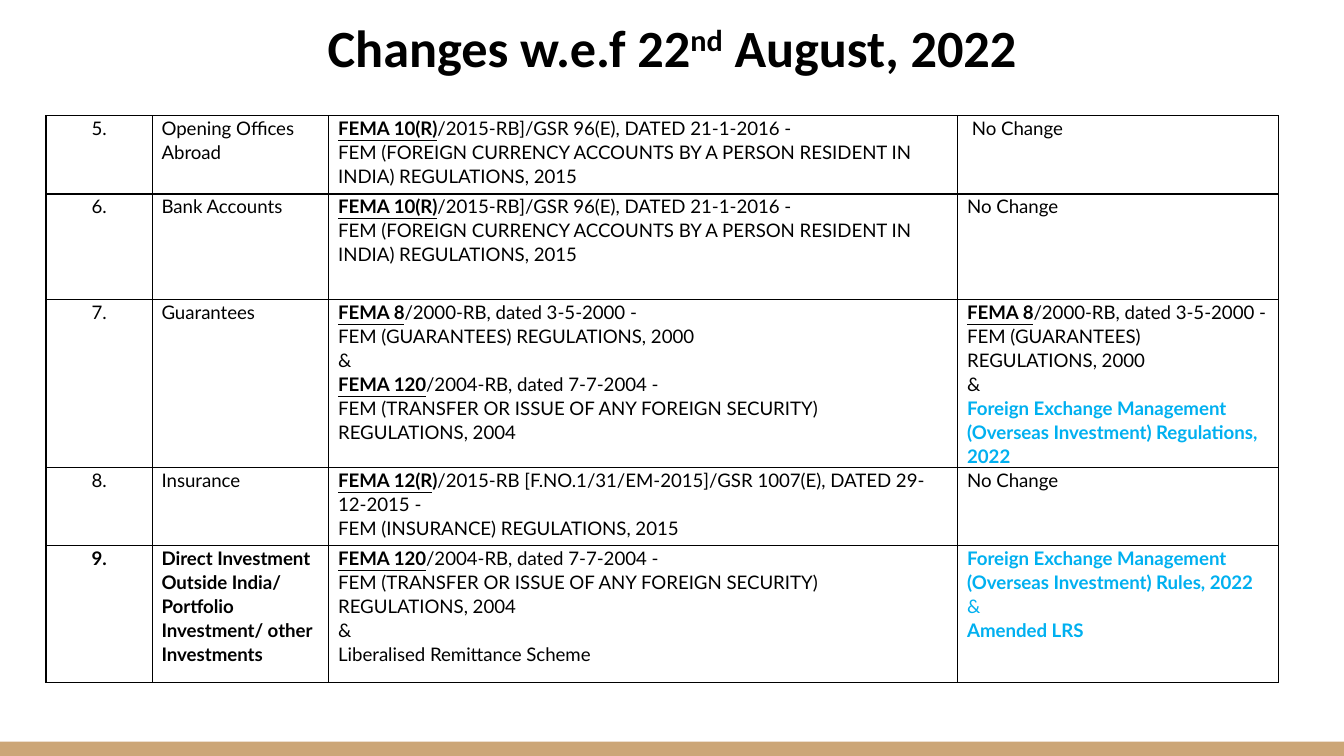
from lxml import etree
from pptx import Presentation
from pptx.dml.color import RGBColor
from pptx.enum.shapes import MSO_SHAPE
from pptx.enum.text import PP_ALIGN
from pptx.oxml.ns import qn
from pptx.util import Pt

RECTANGLE = MSO_SHAPE.RECTANGLE
CENTER, LEFT = PP_ALIGN.CENTER, PP_ALIGN.LEFT
COLORS = {"text": "000000", "new": "00B0F0", "footer": "CCA677"}

# Each cell is a list of paragraphs, each paragraph a list of (text, style) runs
# Styles: b bold, u underlined, n colour of new rules
CURRENCY_ACCOUNTS = [
    [("FEMA 10(R)", "bu"), ("/2015-RB]/GSR 96(E), DATED 21-1-2016 -", "")],
    [("FEM (FOREIGN CURRENCY ACCOUNTS BY A PERSON RESIDENT IN INDIA) "
      "REGULATIONS, 2015", "")],
]
AND = [[("&", "")]]
GUARANTEES = [
    [("FEMA 8", "bu"), ("/2000-RB, dated 3-5-2000 -", "")],
    [("FEM (GUARANTEES) REGULATIONS, 2000", "")],
] + AND
FOREIGN_SECURITY = [
    [("FEMA 120", "bu"), ("/2004-RB, dated 7-7-2004 -", "")],
    [("FEM (TRANSFER OR ISSUE OF ANY FOREIGN SECURITY) REGULATIONS, 2004", "")],
]
INSURANCE = [
    [("FEMA 12(R", "bu"), (")", "b"),
     ("/2015-RB [F.NO.1/31/EM-2015]/GSR 1007(E), DATED 29-12-2015 -", "")],
    [("FEM (INSURANCE) REGULATIONS, 2015", "")],
]
NO_CHANGE = [[("No Change", "")]]
OVERSEAS_REGULATIONS = [
    [("Foreign Exchange Management (Overseas Investment) Regulations, 2022", "bn")],
]
OVERSEAS_RULES = [
    [("Foreign Exchange Management (Overseas Investment) Rules, 2022", "bn")],
    [("&", "n")],
    [("Amended LRS", "bn")],
]
DIRECT_INVESTMENT = ("Direct Investment Outside India/ Portfolio Investment/ "
                     "other Investments")

# Row height, topic, style of number and topic, old rules, new rules
ROWS = [
    (42, "Opening Offices Abroad", "", CURRENCY_ACCOUNTS, [[(" No Change", "")]]),
    (56.6, "Bank Accounts", "", CURRENCY_ACCOUNTS, NO_CHANGE),
    (86, "Guarantees", "", GUARANTEES + FOREIGN_SECURITY,
     GUARANTEES + OVERSEAS_REGULATIONS),
    (42, "Insurance", "", INSURANCE, NO_CHANGE),
    (73, DIRECT_INVESTMENT, "b",
     FOREIGN_SECURITY + AND + [[("Liberalised Remittance Scheme", "")]],
     OVERSEAS_RULES),
]
COLUMN_WIDTHS = [57, 94.6, 337, 171.6]
FIRST_NUMBER = 5


def add_run(paragraph, text, font_name, size, style):
    run = paragraph.add_run()
    run.text = text
    run.font.name = font_name
    run.font.size = Pt(size)
    run.font.bold = "b" in style
    run.font.underline = "u" in style
    color = COLORS["new" if "n" in style else "text"]
    run.font.color.rgb = RGBColor.from_string(color)
    return run


def add_borders(cell):
    properties = cell._tc.get_or_add_tcPr()
    for position, side in enumerate(("lnL", "lnR", "lnT", "lnB")):
        line = etree.Element(qn(f"a:{side}"), w=str(Pt(0.75)))
        fill = etree.SubElement(line, qn("a:solidFill"))
        etree.SubElement(fill, qn("a:srgbClr"), val=COLORS["text"])
        properties.insert(position, line)


presentation = Presentation()
presentation.slide_width = Pt(720)
presentation.slide_height = Pt(405)
slide = presentation.slides.add_slide(presentation.slide_layouts[6])

# Footer band
footer = slide.shapes.add_shape(RECTANGLE, Pt(0), Pt(397.3), Pt(720), Pt(7.7))
footer.shadow.inherit = False
footer.fill.solid()
footer.fill.fore_color.rgb = RGBColor.from_string(COLORS["footer"])
footer.line.fill.background()

# Title
title = slide.shapes.add_textbox(Pt(24.5), Pt(1), Pt(671), Pt(65))
title_frame = title.text_frame
title_frame.word_wrap = True
title_frame.margin_left = title_frame.margin_right = Pt(7.2)
title_frame.margin_top = title_frame.margin_bottom = Pt(7.2)
paragraph = title_frame.paragraphs[0]
paragraph.alignment = CENTER
add_run(paragraph, "Changes w.e.f 22", "Calibri", 28, "b")
ordinal = add_run(paragraph, "nd", "Calibri", 28, "b")
ordinal._r.get_or_add_rPr().set("baseline", "30000")
add_run(paragraph, " August, 2022", "Calibri", 28, "b")

# Table of changes
heights = [row[0] for row in ROWS]
table = slide.shapes.add_table(
    len(ROWS), len(COLUMN_WIDTHS), Pt(24.6), Pt(62),
    Pt(sum(COLUMN_WIDTHS)), Pt(sum(heights))).table
table.first_row = False
table.horz_banding = False
for column, width in zip(table.columns, COLUMN_WIDTHS):
    column.width = Pt(width)

for row_index, (height, topic, style, old_rules, new_rules) in enumerate(ROWS):
    table.rows[row_index].height = Pt(height)
    number = f"{FIRST_NUMBER + row_index}."
    contents = [[[(number, style)]], [[(topic, style)]], old_rules, new_rules]
    for column_index, paragraphs in enumerate(contents):
        cell = table.cell(row_index, column_index)
        cell.margin_left = cell.margin_right = Pt(5)
        cell.margin_top = cell.margin_bottom = Pt(0)
        cell.fill.background()
        add_borders(cell)
        text_frame = cell.text_frame
        for index, runs in enumerate(paragraphs):
            paragraph = text_frame.add_paragraph() if index else text_frame.paragraphs[0]
            paragraph.alignment = LEFT if column_index else CENTER
            paragraph.line_spacing = 1.07
            for text, run_style in runs:
                add_run(paragraph, text, "Lato", 10, run_style)

presentation.save("out.pptx")
